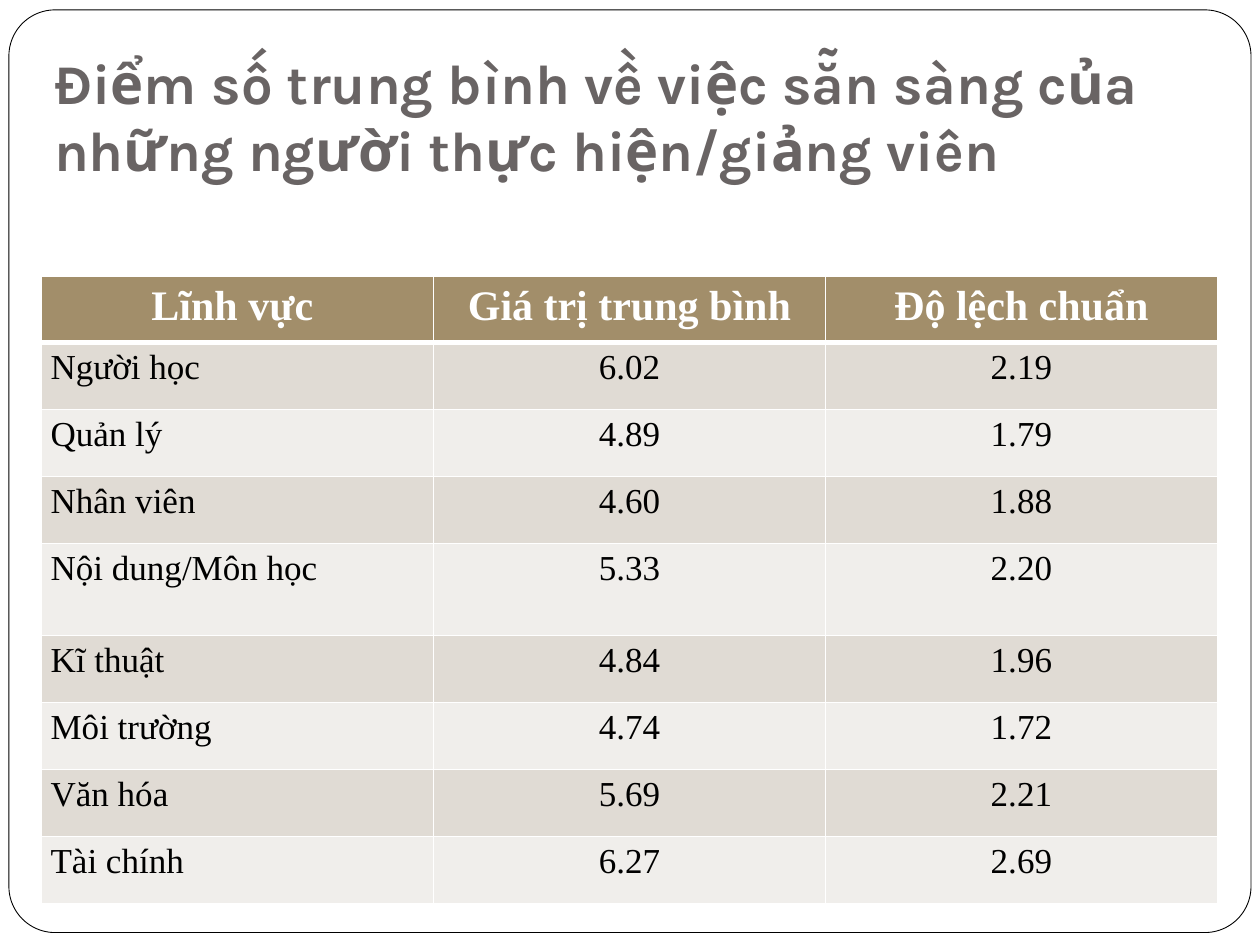
from lxml import etree
from pptx import Presentation
from pptx import util as u
from pptx.dml.color import RGBColor
from pptx.enum import shapes, text
from pptx.oxml.ns import qn

Cm, Pt = u.Cm, u.Pt
HUES = {
    "white": "FFFFFF", "black": "000000", "title": "696464",
    "head": "A28E6A", "dark": "E0DBD4", "light": "F0EEEB",
}
SERIF = "Times New Roman"
HEAD = ["Lĩnh vực ", "Giá trị trung bình", "Độ lệch chuẩn"]
ROWS = [
    ["Người học", "6.02", "2.19"],
    ["Quản lý", "4.89", "1.79"],
    ["Nhân viên", "4.60", "1.88"],
    ["Nội dung/Môn học", "5.33", "2.20"],
    ["Kĩ thuật", "4.84", "1.96"],
    ["Môi trường", "4.74", "1.72"],
    ["Văn hóa", "5.69", "2.21"],
    ["Tài chính", "6.27", "2.69"],
]
TALL = 4  # table row with extra height


def hue(name):
    return RGBColor.from_string(HUES[name])


def write(frame, words, size=20, font=SERIF, color="black", bold=False,
          align=text.PP_ALIGN.LEFT, space=None):
    para = frame.paragraphs[0]
    para.alignment = align
    if space:
        para.line_spacing = space
    run = para.add_run()
    run.text = words
    run.font.size = Pt(size)
    run.font.name = font
    run.font.bold = bold
    run.font.color.rgb = hue(color)


def add_frame(slide):
    box = slide.shapes.add_shape(shapes.MSO_SHAPE.ROUNDED_RECTANGLE,
                                 Cm(0.18), Cm(0.2), Cm(25.04), Cm(18.6))
    box.adjustments[0] = 0.05
    box.shadow.inherit = False
    box.fill.solid()
    box.fill.fore_color.rgb = hue("white")
    box.line.color.rgb = hue("black")
    box.line.width = Pt(0.5)


def add_title(slide, words):
    box = slide.shapes.add_textbox(Cm(0.84), Cm(0.76), Cm(23.93), Cm(3.18))
    frame = box.text_frame
    frame.word_wrap = True
    frame.vertical_anchor = text.MSO_ANCHOR.BOTTOM
    frame.margin_bottom = Cm(0.25)
    write(frame, words, size=32, font="Karla", color="title", bold=True)


def add_edges(cell, base):
    """Draw white cell borders; base is the width of the bottom one."""
    props = cell._tc.get_or_add_tcPr()
    for side, width in (("L", 1), ("R", 1), ("T", 1), ("B", base)):
        line = etree.SubElement(props, qn("a:ln" + side), w=str(Pt(width)))
        fill = etree.SubElement(line, qn("a:solidFill"))
        etree.SubElement(fill, qn("a:srgbClr"), val=HUES["white"])


def fill_cell(cell, words, fill, base=1, **form):
    cell.margin_left = cell.margin_right = Cm(0.18)
    cell.margin_top = cell.margin_bottom = 0
    add_edges(cell, base)
    cell.fill.solid()
    cell.fill.fore_color.rgb = hue(fill)
    write(cell.text_frame, words, space=1.15, **form)


def add_scores(slide):
    grid = slide.shapes.add_table(len(ROWS) + 1, len(HEAD), Cm(0.84), Cm(5.56),
                                  Cm(23.7), Cm(12.65)).table
    for col in grid.columns:
        col.width = Cm(7.9)
    for i, row in enumerate(grid.rows):
        row.height = Cm(1.85 if i == TALL else 1.35)

    # Heading row
    mid = text.PP_ALIGN.CENTER
    for c, words in enumerate(HEAD):
        fill_cell(grid.cell(0, c), words, "head", base=3, size=24,
                  color="white", bold=True, align=mid)

    # Banded rows: area on the left, numbers centred
    for r, row in enumerate(ROWS, 1):
        for c, words in enumerate(row):
            fill_cell(grid.cell(r, c), words, "dark" if r % 2 else "light",
                      base=1, align=mid if c else text.PP_ALIGN.LEFT)
    for c in range(len(HEAD)):
        top = grid.cell(1, c)._tc.tcPr.find(qn("a:lnT"))
        top.set("w", str(Pt(3)))  # matches the rule under the heading


def main():
    deck = Presentation()
    deck.slide_width, deck.slide_height = Cm(25.4), Cm(19.05)
    slide = deck.slides.add_slide(deck.slide_layouts[6])
    add_frame(slide)
    add_title(slide, "Điểm số trung bình về việc sẵn sàng của "
                     "những người thực hiện/giảng viên")
    add_scores(slide)
    deck.save("out.pptx")


if __name__ == "__main__":
    main()
